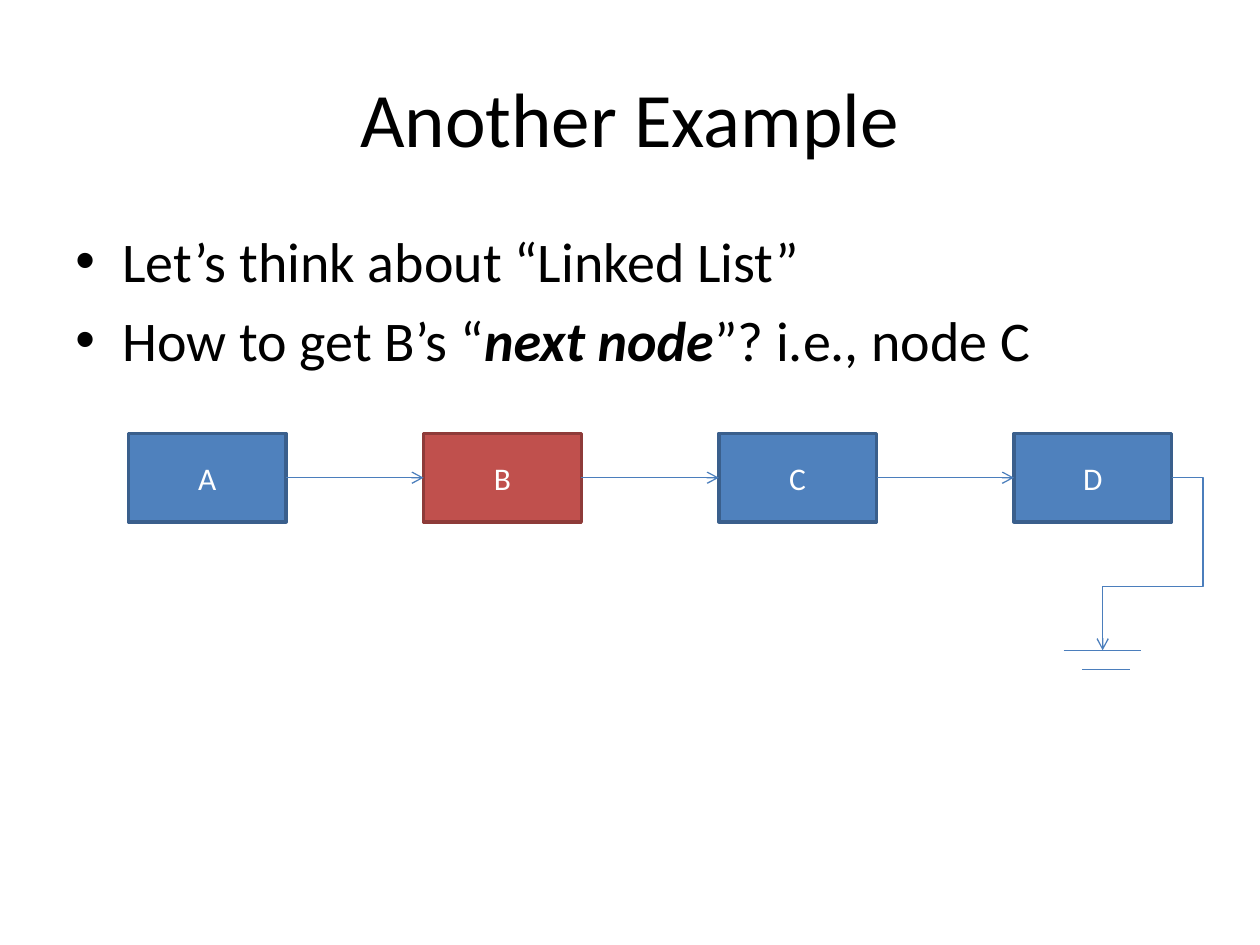
"""Build the linked list slide: title, two bullets and a chain of four nodes."""
from lxml import etree
from pptx import Presentation
from pptx.dml.color import RGBColor
from pptx.enum.shapes import MSO_CONNECTOR, MSO_SHAPE
from pptx.enum.text import MSO_ANCHOR, PP_ALIGN
from pptx.oxml.ns import qn
from pptx.util import Cm, Pt

STRAIGHT, ELBOW = MSO_CONNECTOR.STRAIGHT, MSO_CONNECTOR.ELBOW
RECT = MSO_SHAPE.RECTANGLE
MIDDLE, CENTER = MSO_ANCHOR.MIDDLE, PP_ALIGN.CENTER
hue = RGBColor.from_string


def write(para, text, size=18, color="000000", bold=False, align=None):
    run = para.add_run()
    run.text = text
    font = run.font
    font.name, font.size, font.color.rgb = "Calibri", Pt(size), hue(color)
    font.bold = font.italic = bold
    if align is not None:
        para.alignment = align


def link(kind, x1, y1, x2, y2, arrow=False):
    line = slide.shapes.add_connector(kind, Cm(x1), Cm(y1), Cm(x2), Cm(y2))
    line.line.color.rgb, line.line.width = hue("4B7EBC"), Pt(0.75)
    props = line.element.spPr
    if arrow:
        etree.SubElement(props.find(qn("a:ln")), qn("a:tailEnd"), type="arrow")
    etree.SubElement(props, qn("a:effectLst"))
    return line


deck = Presentation()
deck.slide_width, deck.slide_height = Cm(25.4), Cm(19.05)
slide = deck.slides.add_slide(deck.slide_layouts[6])

title = slide.shapes.add_textbox(Cm(1.27), Cm(0.76), Cm(22.86), Cm(3.18)).text_frame
title.word_wrap, title.vertical_anchor = True, MIDDLE
write(title.paragraphs[0], "Another Example", size=44, align=CENTER)

body = slide.shapes.add_textbox(Cm(1.27), Cm(4.45), Cm(22.86), Cm(12.57)).text_frame
body.word_wrap = True
points = [
    [("Let’s think about “Linked List”", False)],
    [("How to get B’s “", False), ("next node", True), ("”? i.e., node C", False)],
]
for num, parts in enumerate(points):
    para = body.add_paragraph() if num else body.paragraphs[0]
    para.space_before = Pt(6.4)
    props = para._p.get_or_add_pPr()
    props.set("marL", str(Cm(0.95)))
    props.set("indent", str(-Cm(0.95)))
    etree.SubElement(props, qn("a:buFont"), typeface="Arial")
    etree.SubElement(props, qn("a:buChar"), char="•")
    for text, bold in parts:
        write(para, text, size=32, bold=bold)

left, top, wide, high, step = 2.59, 8.74, 3.18, 1.78, 5.95
mid = top + high / 2
nodes = []
for num, name in enumerate("ABCD"):
    fill, edge = ("C0504D", "8E3B39") if name == "B" else ("4F81BD", "3A5F8C")
    node = slide.shapes.add_shape(RECT, Cm(left + num * step), Cm(top), Cm(wide), Cm(high))
    node.shadow.inherit = False
    node.fill.solid()
    node.fill.fore_color.rgb = hue(fill)
    node.line.color.rgb, node.line.width = hue(edge), Pt(2)
    node.text_frame.vertical_anchor = MIDDLE
    write(node.text_frame.paragraphs[0], name, color="FFFFFF", align=CENTER)
    nodes.append(node)

for num in range(3):
    start = left + num * step + wide
    line = link(STRAIGHT, start, mid, left + (num + 1) * step, mid, arrow=True)
    line.begin_connect(nodes[num], 3)
    line.end_connect(nodes[num + 1], 1)

end, floor = 22.23, 13.11
bend = link(ELBOW, left + 3 * step + wide, mid, end, floor, arrow=True)
bend.begin_connect(nodes[3], 3)
geom = bend.element.spPr.find(qn("a:prstGeom"))
geom.set("prst", "bentConnector4")
turns = geom.get_or_add_avLst()
for name, value in (("adj1", -45700), ("adj2", 62900)):
    etree.SubElement(turns, qn("a:gd"), name=name, fmla=f"val {value}")

link(STRAIGHT, 21.44, floor, 23.01, floor)
link(STRAIGHT, 21.82, 13.49, 22.78, 13.49)

deck.save("out.pptx")
